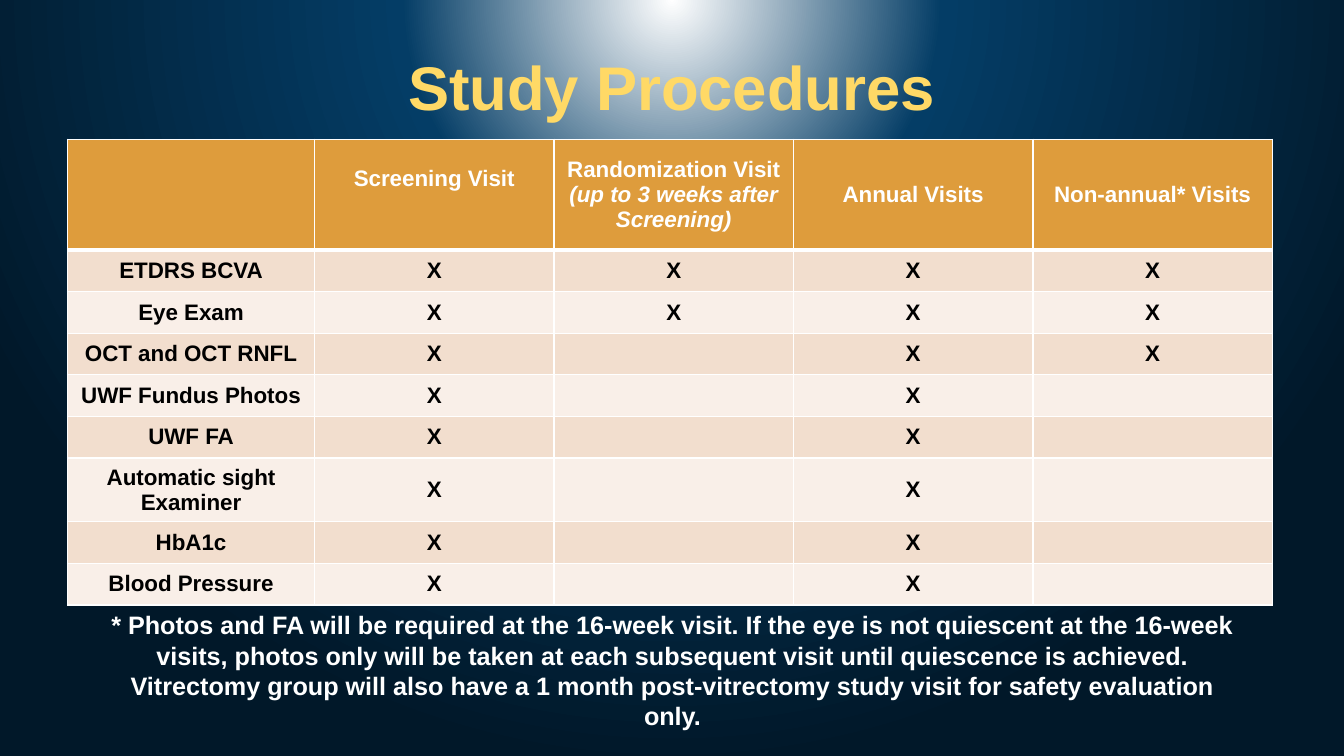
from dataclasses import dataclass
from pptx import Presentation
from pptx.dml.color import RGBColor
from pptx.enum.text import MSO_ANCHOR, PP_ALIGN
from pptx.oxml import parse_xml
from pptx.oxml.ns import nsdecls, qn
from pptx.util import Inches, Pt

TITLE = "Study Procedures"
VISITS = [
    [],
    ["Screening Visit"],
    ["Randomization Visit", "(up to 3 weeks after Screening)"],
    ["Annual Visits"],
    ["Non-annual* Visits"],
]
PROCEDURES = [
    ("ETDRS BCVA", "XXXX"),
    ("Eye Exam", "XXXX"),
    ("OCT and OCT RNFL", "X XX"),
    ("UWF Fundus Photos", "X X "),
    ("UWF FA", "X X "),
    ("Automatic sight Examiner", "X X "),
    ("HbA1c", "X X "),
    ("Blood Pressure", "X X "),
]
FOOTNOTES = [
    "* Photos and FA will be required at the 16-week visit. If the eye is not quiescent at the "
    "16-week visits, photos only will be taken at each subsequent visit until quiescence is achieved.",
    "Vitrectomy group will also have a 1 month post-vitrectomy study visit for safety evaluation only.",
]


@dataclass(frozen=True)
class Theme:
    font: str = "Arial"
    title: str = "FFD966"
    light: str = "FFFFFF"
    dark: str = "000000"
    header: str = "DE9C3C"
    bands: tuple = ("F2DECE", "F9EFE8")
    glow: tuple = ((0, "FFFFFF"), (35, "043D66"), (100, "011829"))
    title_size: int = 44
    cell_size: int = 16
    note_size: int = 18
    thin: int = 1
    thick: int = 3


THEME = Theme()
WIDTH, HEIGHT = 13.33, 7.5
TITLE_BOX = (0, 0.02, WIDTH, 1.76)
TABLE_BOX = (0.67, 1.38, 11.95, 4.59)
NOTE_BOX = (0.92, 6, 11.5, 1.31)
LABEL_WIDTH, HEADER_HEIGHT, TALL_HEIGHT = 2.45, 1.1, 0.6
TALL_ROW = 6


def paint_background(page):
    page.background.fill.solid()
    stops = "".join(
        f'<a:gs pos="{share * 1000}"><a:srgbClr val="{color}"/></a:gs>' for share, color in THEME.glow
    )
    glow = parse_xml(
        f'<a:gradFill {nsdecls("a")} rotWithShape="1"><a:gsLst>{stops}</a:gsLst><a:path path="circle">'
        '<a:fillToRect l="50000" t="-80000" r="50000" b="180000"/></a:path></a:gradFill>'
    )
    properties = page.element.find(".//" + qn("p:bgPr"))
    properties.replace(properties[0], glow)


def write(frame, lines, size, color):
    for index, line in enumerate(lines or [""]):
        para = frame.paragraphs[0] if index == 0 else frame.add_paragraph()
        para.text = line
        para.alignment = PP_ALIGN.CENTER
        para.font.name = THEME.font
        para.font.size = Pt(size)
        para.font.bold = True
        para.font.color.rgb = RGBColor.from_string(color)


def add_text(page, place, lines, size, color, anchor):
    frame = page.shapes.add_textbox(*map(Inches, place)).text_frame
    frame.word_wrap = True
    frame.vertical_anchor = anchor
    write(frame, lines, size, color)
    return frame


def draw_borders(cell, widths):
    properties = cell._tc.get_or_add_tcPr()
    for index, (side, width) in enumerate(zip("LRTB", widths)):
        line = parse_xml(
            f'<a:ln{side} {nsdecls("a")} w="{Pt(width)}"><a:solidFill>'
            f'<a:srgbClr val="{THEME.light}"/></a:solidFill></a:ln{side}>'
        )
        properties.insert(index, line)


def add_schedule(page):
    rows = [VISITS] + [
        [[name]] + [[mark.strip()] for mark in marks] for name, marks in PROCEDURES
    ]
    left, top, width, height = TABLE_BOX
    table = page.shapes.add_table(len(rows), len(VISITS), *map(Inches, TABLE_BOX)).table
    visit_width = (width - LABEL_WIDTH) / (len(VISITS) - 1)
    row_height = (height - HEADER_HEIGHT - TALL_HEIGHT) / (len(rows) - 2)
    for index, column in enumerate(table.columns):
        column.width = Inches(visit_width if index else LABEL_WIDTH)
    for index, row in enumerate(table.rows):
        row.height = Inches({0: HEADER_HEIGHT, TALL_ROW: TALL_HEIGHT}.get(index, row_height))
    for row_index, row in enumerate(rows):
        is_header = row_index == 0
        fill = THEME.header if is_header else THEME.bands[(row_index - 1) % 2]
        above = THEME.thick if row_index == 1 else THEME.thin
        below = THEME.thick if is_header else THEME.thin
        for column_index, lines in enumerate(row):
            cell = table.cell(row_index, column_index)
            cell.vertical_anchor = MSO_ANCHOR.MIDDLE
            cell.fill.solid()
            cell.fill.fore_color.rgb = RGBColor.from_string(fill)
            write(cell.text_frame, lines, THEME.cell_size, THEME.light if is_header else THEME.dark)
            draw_borders(cell, (THEME.thin, THEME.thin, above, below))
    table.cell(0, 1).margin_bottom = Inches(0.37)
    table.cell(0, 2).text_frame.paragraphs[1].font.italic = True


def main():
    deck = Presentation()
    deck.slide_width, deck.slide_height = Inches(WIDTH), Inches(HEIGHT)
    page = deck.slides.add_slide(deck.slide_layouts[6])
    paint_background(page)
    title = add_text(page, TITLE_BOX, [TITLE], THEME.title_size, THEME.title, MSO_ANCHOR.MIDDLE)
    title.paragraphs[0].line_spacing = 0.9
    add_schedule(page)
    add_text(page, NOTE_BOX, FOOTNOTES, THEME.note_size, THEME.light, MSO_ANCHOR.TOP)
    deck.save("out.pptx")


if __name__ == "__main__":
    main()
